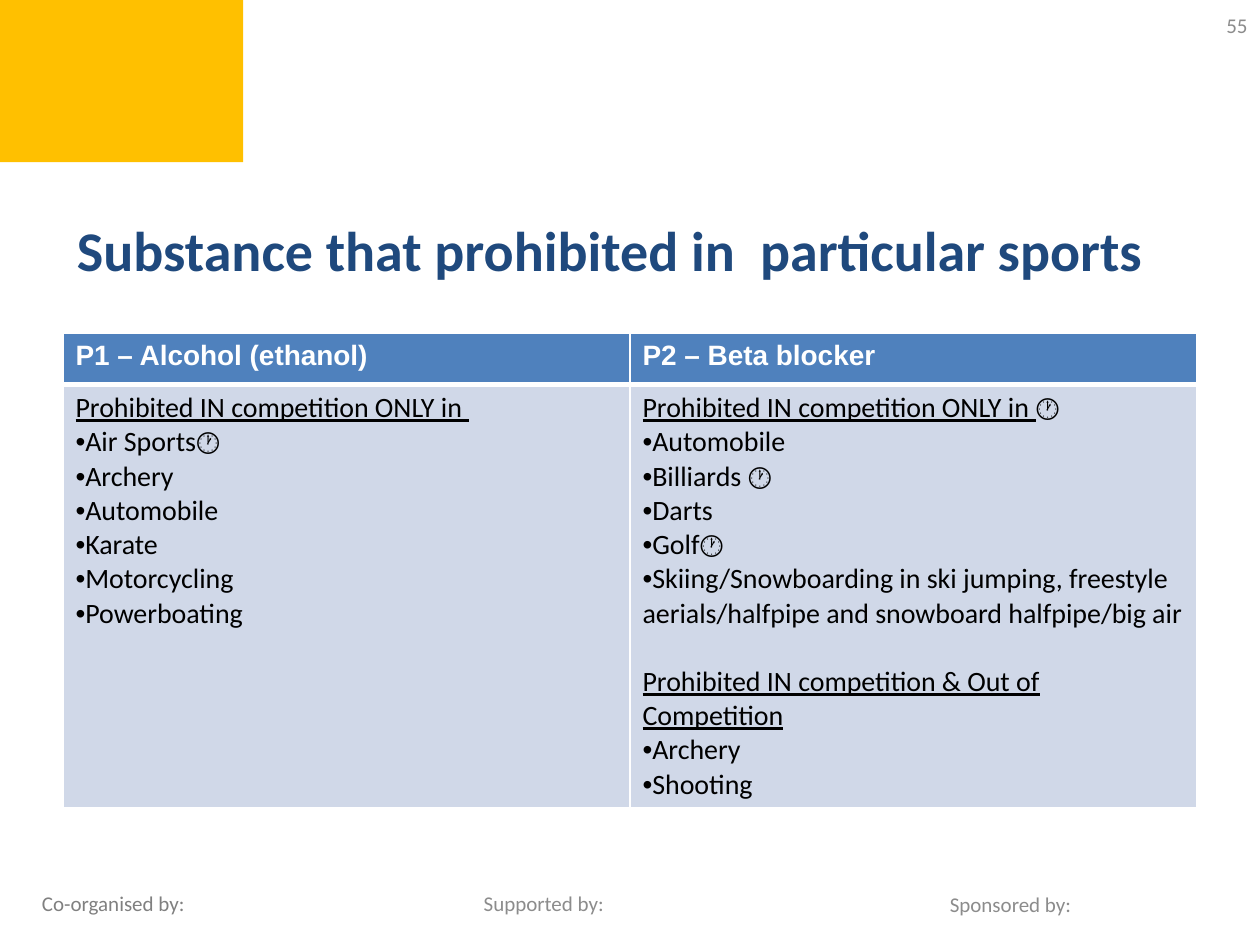
"""Build a slide listing the substances prohibited in particular sports."""
from dataclasses import dataclass

from lxml import etree
from pptx import Presentation
from pptx.dml.color import RGBColor
from pptx.enum.shapes import MSO_SHAPE
from pptx.enum.text import MSO_ANCHOR, PP_ALIGN
from pptx.oxml.ns import qn
from pptx.util import Pt

RECTANGLE = MSO_SHAPE.RECTANGLE
MIDDLE = MSO_ANCHOR.MIDDLE
LEFT, RIGHT = PP_ALIGN.LEFT, PP_ALIGN.RIGHT

WHITE = RGBColor(0xFF, 0xFF, 0xFF)
BLACK = RGBColor(0, 0, 0)
AMBER = RGBColor(0xFF, 0xC0, 0x00)
NAVY = RGBColor(0x1F, 0x49, 0x7D)
BLUE = RGBColor(0x4F, 0x81, 0xBD)
PALE_BLUE = RGBColor(0xD0, 0xD8, 0xE8)
GREY = RGBColor(0x80, 0x80, 0x80)
LIGHT_GREY = RGBColor(0x8C, 0x8C, 0x8C)

TABLE_SIZE = 16
LINE_HEIGHT = 19.5
HEADER_HEIGHT, BODY_HEIGHT = 29.2, 241.6
COLUMN_WIDTH = 324
RULE_WIDTH = 3


@dataclass(frozen=True)
class Label:
    """A single-line text box, with lengths in points."""

    text: str
    left: float
    top: float
    width: float
    height: float
    color: RGBColor = LIGHT_GREY
    size: float = 12
    bold: bool = False
    align: PP_ALIGN = LEFT


@dataclass(frozen=True)
class Group:
    """An underlined heading, an optional plain mark, and its sports."""

    heading: str
    sports: tuple[str, ...]
    mark: str = ""


@dataclass(frozen=True)
class Substance:
    """One column of the table."""

    name: str
    groups: tuple[Group, ...]


LABELS = (
    Label("Co-organised by:", 16.9, 501.8, 228, 28.8, GREY),
    Label("Sponsored by:", 535.7, 502.2, 164, 28.8),
    Label("Supported by:", 269.3, 501.8, 228, 28.8),
    Label("Substance that prohibited in  particular sports",
          36.9, 105.5, 648, 73.4, NAVY, 32, True),
    Label("55", 552, 0, 168, 28.8, align=RIGHT),
)

SUBSTANCES = (
    Substance("P1 – Alcohol (ethanol)", (
        Group("Prohibited IN competition ONLY in ",
              ("Air Sports🕐", "Archery", "Automobile", "Karate",
               "Motorcycling", "Powerboating")),
    )),
    Substance("P2 – Beta blocker", (
        Group("Prohibited IN competition ONLY in ",
              ("Automobile", "Billiards 🕐", "Darts", "Golf🕐",
               "Skiing/Snowboarding in ski jumping, freestyle "
               "aerials/halfpipe and snowboard halfpipe/big air"), "🕐"),
        Group("Prohibited IN competition & Out of Competition",
              ("Archery", "Shooting")),
    )),
)


def style_run(span, size: float, color: RGBColor, bold: bool = False,
              name: str = "Calibri", underline: bool = False) -> None:
    """Set the font of one run."""
    font = span.font
    font.name, font.size, font.bold = name, Pt(size), bold
    font.underline = underline
    font.color.rgb = color


def add_label(page, label: Label) -> None:
    """Draw one text box."""
    box = page.shapes.add_textbox(Pt(label.left), Pt(label.top),
                                  Pt(label.width), Pt(label.height))
    frame = box.text_frame
    frame.word_wrap = True
    frame.vertical_anchor = MIDDLE
    frame.text = label.text
    para = frame.paragraphs[0]
    para.alignment = label.align
    style_run(para.runs[0], label.size, label.color, label.bold)


def add_corner(page) -> None:
    """Draw the amber block in the top left corner."""
    corner = page.shapes.add_shape(RECTANGLE, 0, 0, Pt(139), Pt(92.7))
    corner.shadow.inherit = False
    corner.fill.solid()
    corner.fill.fore_color.rgb = AMBER
    corner.line.fill.background()


def style_cell(cell, color: RGBColor, ruled_side: str) -> None:
    """Give a table cell a plain fill and a thick white rule on one side."""
    properties = cell._tc.get_or_add_tcPr()
    rule = etree.SubElement(properties, qn(ruled_side))
    rule.set("w", str(Pt(RULE_WIDTH)))
    fill = etree.SubElement(rule, qn("a:solidFill"))
    etree.SubElement(fill, qn("a:srgbClr")).set("val", str(WHITE))
    cell.fill.solid()
    cell.fill.fore_color.rgb = color


def add_bullet(para) -> None:
    """Give a paragraph a round bullet."""
    properties = para._p.get_or_add_pPr()
    etree.SubElement(properties, qn("a:buFont")).set("typeface", "Arial")
    etree.SubElement(properties, qn("a:buChar")).set("char", "•")


def write_group(frame, group: Group, first: bool) -> None:
    """Write a heading and its bulleted sports into a cell."""
    para = frame.paragraphs[0] if first else frame.add_paragraph()
    if not first:
        para.space_before = Pt(LINE_HEIGHT)
    para.text = group.heading
    style_run(para.runs[0], TABLE_SIZE, BLACK, underline=True)
    if group.mark:
        span = para.add_run()
        span.text = group.mark
        style_run(span, TABLE_SIZE, BLACK)
    for sport in group.sports:
        para = frame.add_paragraph()
        add_bullet(para)
        para.text = sport
        style_run(para.runs[0], TABLE_SIZE, BLACK)


def add_substance_table(page, substances: tuple[Substance, ...]) -> None:
    """Draw the table with one column for each substance."""
    count = len(substances)
    table = page.shapes.add_table(
        2, count, Pt(36), Pt(190.6), Pt(COLUMN_WIDTH * count),
        Pt(HEADER_HEIGHT + BODY_HEIGHT)).table
    table.rows[0].height = Pt(HEADER_HEIGHT)
    table.rows[1].height = Pt(BODY_HEIGHT)
    for column, substance in enumerate(substances):
        header, body = table.cell(0, column), table.cell(1, column)
        style_cell(header, BLUE, "a:lnB")
        style_cell(body, PALE_BLUE, "a:lnT")
        header.text_frame.text = substance.name
        style_run(header.text_frame.paragraphs[0].runs[0],
                  TABLE_SIZE, WHITE, True, "Arial")
        for index, group in enumerate(substance.groups):
            write_group(body.text_frame, group, index == 0)


def main() -> None:
    """Build and save the deck."""
    deck = Presentation()
    deck.slide_width, deck.slide_height = Pt(720), Pt(540)
    page = deck.slides.add_slide(deck.slide_layouts[6])
    add_corner(page)
    for label in LABELS:
        add_label(page, label)
    add_substance_table(page, SUBSTANCES)
    deck.save("out.pptx")


if __name__ == "__main__":
    main()
